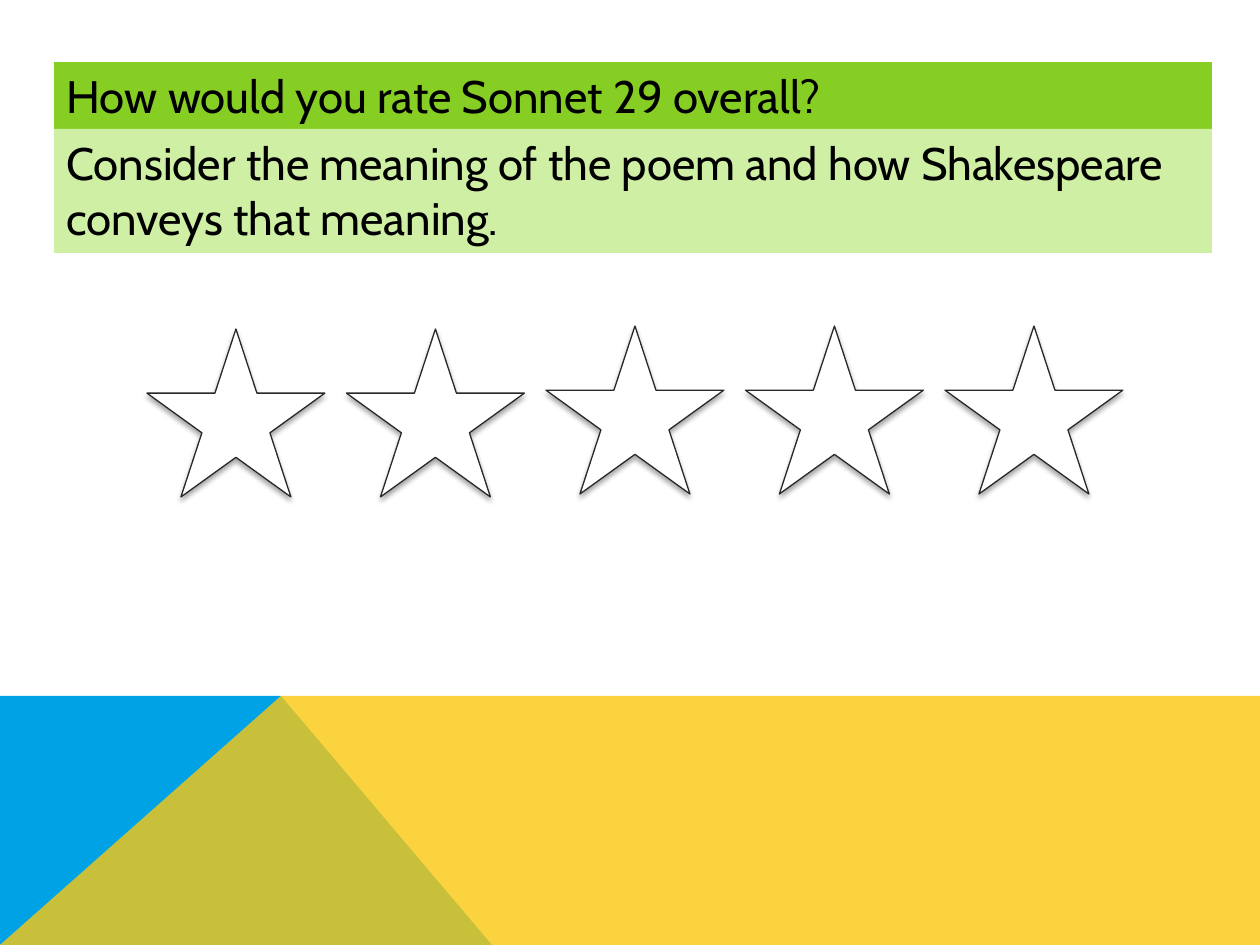
from lxml import etree
from pptx import Presentation
from pptx.dml.color import RGBColor
from pptx.enum.shapes import MSO_SHAPE as Shape
from pptx.enum.text import MSO_ANCHOR as Anchor, MSO_AUTO_SIZE as AutoSize, PP_ALIGN as Align
from pptx.oxml import parse_xml
from pptx.oxml.ns import nsdecls, qn
from pptx.util import Pt

EMU_PER_PX = 914400 / 126
FONT = "Cabin"
BLACK = RGBColor(0x00, 0x00, 0x00)
WHITE = RGBColor(0xFF, 0xFF, 0xFF)
OUTLINE = RGBColor(0x28, 0x28, 0x28)
GREEN = RGBColor(0x86, 0xCE, 0x24)
PALE_GREEN = RGBColor(0xCF, 0xEF, 0xA4)
BLUE = RGBColor(0x00, 0xA2, 0xE6)
YELLOW = RGBColor(0xFA, 0xC8, 0x10)


def px(length):
    return round(length * EMU_PER_PX)


def place(part, left, top, width, height):
    part.left, part.top, part.width, part.height = map(px, (left, top, width, height))


def fill_solid(part, color, opacity=100):
    part.fill.solid()
    part.fill.fore_color.rgb = color
    if opacity < 100:
        tint = part.fill._xPr.find(qn("a:solidFill"))[0]
        etree.SubElement(tint, qn("a:alpha")).set("val", str(opacity * 1000))


def add_facet(slide, points, color, opacity=100):
    builder = slide.shapes.build_freeform(*points[0], scale=EMU_PER_PX)
    builder.add_line_segments(points[1:], close=True)
    facet = builder.convert_to_shape()
    facet.shadow.inherit = False
    fill_solid(facet, color, opacity)
    facet.line.fill.background()


def add_footer_art(slide, left, top, width, height):
    right, bottom = left + width, top + height
    start, peak = (left, bottom), (left + 281, top)
    add_facet(slide, [start, (left, top), peak, (left + 492, bottom)], BLUE)
    add_facet(slide, [start, peak, (right, top), (right, bottom)], YELLOW, 80)


def format_banner(banner, wording, color):
    fill_solid(banner, color)
    banner.line.fill.background()
    frame = banner.text_frame
    frame.text = wording
    frame.word_wrap = True
    frame.auto_size = AutoSize.NONE
    frame.vertical_anchor = Anchor.TOP
    paragraph = frame.paragraphs[0]
    paragraph.alignment = Align.LEFT
    font = paragraph.runs[0].font
    font.name, font.size, font.color.rgb = FONT, Pt(26), BLACK


def add_question(slide, left, top, width, height):
    question_height = 67
    question = slide.shapes.title
    place(question, left, top, width, question_height)
    format_banner(question, "How would you rate Sonnet 29 overall?", GREEN)

    prompt = slide.shapes.add_shape(Shape.RECTANGLE, 0, 0, 0, 0)
    place(prompt, left, top + question_height, width, height - question_height)
    prompt.shadow.inherit = False
    format_banner(
        prompt,
        "Consider the meaning of the poem and how Shakespeare conveys that meaning.",
        PALE_GREEN,
    )


def add_soft_shadow(part):
    part.shadow.inherit = False
    effects = part._element.spPr.find(qn("a:effectLst"))
    effects.append(parse_xml(
        f'<a:outerShdw {nsdecls("a")} blurRad="{Pt(3.1)}" dist="{Pt(1.8)}" '
        'dir="5400000" rotWithShape="0"><a:srgbClr val="000000">'
        '<a:alpha val="35000"/></a:srgbClr></a:outerShdw>'
    ))


def add_rating(slide, left, top, width, height):
    star_width, star_height = 178, 168
    drops = [height - star_height] * 2 + [0] * 3
    step = (width - star_width) / (len(drops) - 1)
    for index, drop in enumerate(drops):
        star = slide.shapes.add_shape(Shape.STAR_5_POINT, 0, 0, 0, 0)
        place(star, left + index * step, top + drop, star_width, star_height)
        fill_solid(star, WHITE)
        star.line.color.rgb = OUTLINE
        star.line.width = Pt(0.75)
        add_soft_shadow(star)


def main():
    deck = Presentation()
    deck.slide_width, deck.slide_height = px(1260), px(945)
    slide = deck.slides.add_slide(deck.slide_layouts[5])
    add_footer_art(slide, 0, 696, 1260, 249)
    add_question(slide, 54, 62, 1158, 191)
    add_rating(slide, 147, 326, 976, 171)
    deck.save("out.pptx")


if __name__ == "__main__":
    main()
